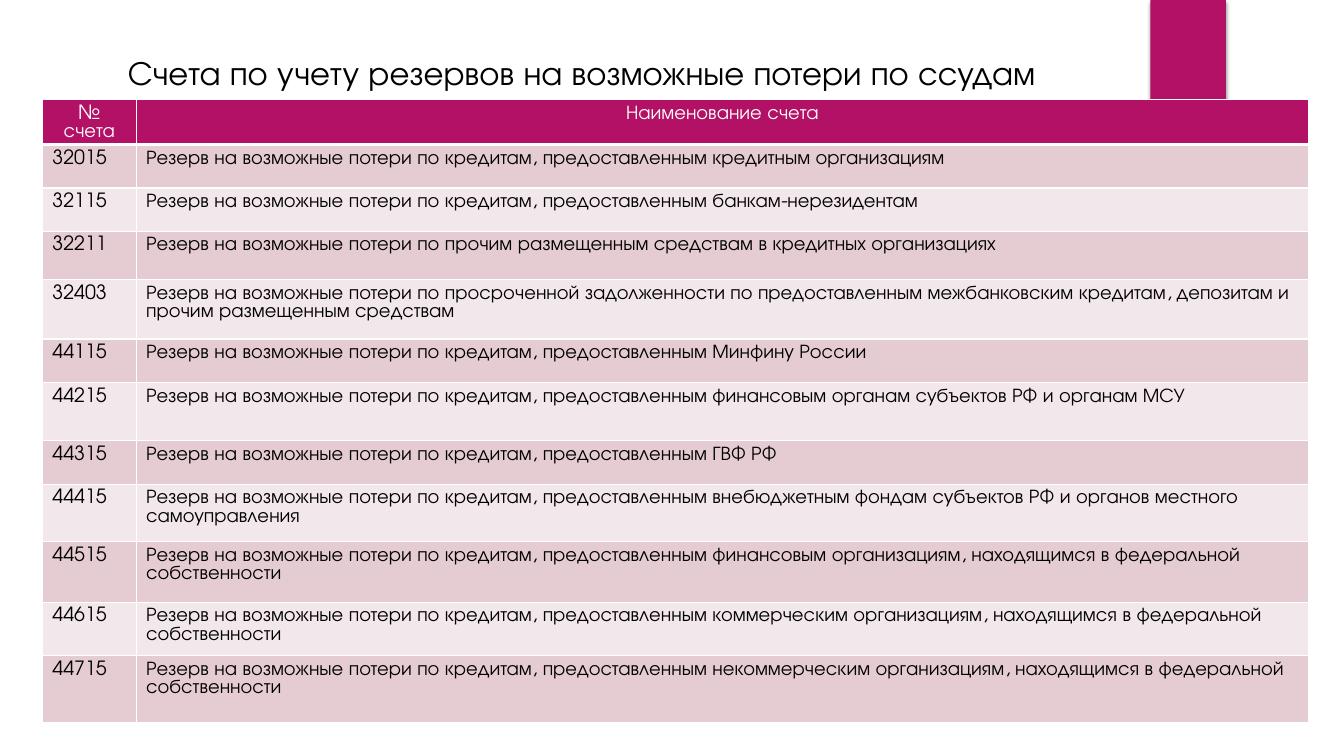
from lxml import etree
from pptx import Presentation
from pptx.dml.color import RGBColor
from pptx.enum.shapes import MSO_SHAPE
from pptx.enum.text import MSO_ANCHOR, PP_ALIGN
from pptx.oxml.ns import qn
from pptx.util import Inches, Pt

RECTANGLE = MSO_SHAPE.RECTANGLE
TOP = MSO_ANCHOR.TOP
LEFT, CENTER = PP_ALIGN.LEFT, PP_ALIGN.CENTER
FONT = "TeX Gyre Adventor"
COLORS = {"accent": "B31166", "dark_band": "E5CCD3", "light_band": "F2E7EA",
          "white": "FFFFFF", "black": "000000"}
COLUMN_WIDTHS = [0.93, 11.63]
ROW_HEIGHTS = [0.43, 0.43, 0.43, 0.48, 0.59, 0.43, 0.58, 0.43, 0.57, 0.6, 0.53, 0.67]
RESERVE = "Резерв на возможные потери по "
LOANS = RESERVE + "кредитам, предоставленным "
FEDERAL = " организациям, находящимся в федеральной собственности"
ACCOUNTS = [
    ("№ счета", "Наименование счета"),
    ("32015", LOANS + "кредитным организациям"),
    ("32115", LOANS + "банкам-нерезидентам"),
    ("32211", RESERVE + "прочим размещенным средствам в кредитных организациях"),
    ("32403", RESERVE + "просроченной задолженности по предоставленным межбанковским "
                        "кредитам, депозитам и прочим размещенным средствам"),
    ("44115", LOANS + "Минфину России"),
    ("44215", LOANS + "финансовым органам субъектов РФ и органам МСУ"),
    ("44315", LOANS + "ГВФ РФ"),
    ("44415", LOANS + "внебюджетным фондам субъектов РФ и органов местного самоуправления"),
    ("44515", LOANS + "финансовым" + FEDERAL),
    ("44615", LOANS + "коммерческим" + FEDERAL),
    ("44715", LOANS + "некоммерческим" + FEDERAL),
]


def write_text(text_frame, text, size, color="black", align=LEFT, line_spacing=None):
    """Write one formatted paragraph into a text frame."""
    paragraph = text_frame.paragraphs[0]
    paragraph.alignment = align
    paragraph.line_spacing = line_spacing
    run = paragraph.add_run()
    run.text = text
    run.font.name = FONT
    run.font.size = Pt(size)
    run.font.bold = False
    run.font.color.rgb = RGBColor.from_string(COLORS[color])


def add_ribbon(slide):
    """Add the accent ribbon with its soft shadow."""
    ribbon = slide.shapes.add_shape(RECTANGLE, Inches(11.41), 0, Inches(0.75), Inches(1.25))
    ribbon.fill.solid()
    ribbon.fill.fore_color.rgb = RGBColor.from_string(COLORS["accent"])
    ribbon.line.fill.background()
    ribbon.shadow.inherit = False
    effects = ribbon._element.spPr.find(qn("a:effectLst"))
    shadow = etree.SubElement(effects, qn("a:outerShdw"), blurRad=str(Pt(3)),
                              dist=str(Pt(2)), dir="5400000", rotWithShape="0")
    color = etree.SubElement(shadow, qn("a:srgbClr"), val=COLORS["black"])
    etree.SubElement(color, qn("a:alpha"), val="45000")


def set_borders(cell, bottom_width, top_width):
    """Draw white borders around a table cell."""
    properties = cell._tc.get_or_add_tcPr()
    widths = {"lnL": 1, "lnR": 1, "lnT": top_width, "lnB": bottom_width}
    for position, (side, width) in enumerate(widths.items()):
        line = etree.Element(qn("a:" + side), w=str(Pt(width)))
        fill = etree.SubElement(line, qn("a:solidFill"))
        etree.SubElement(fill, qn("a:srgbClr"), val=COLORS["white"])
        properties.insert(position, line)


def format_cell(cell, text, row_index):
    """Fill a cell with text and the colours of its row."""
    is_header = row_index == 0
    band = "accent" if is_header else ("light_band", "dark_band")[row_index % 2]
    cell.fill.solid()
    cell.fill.fore_color.rgb = RGBColor.from_string(COLORS[band])
    cell.margin_top = Inches(0.05)
    cell.margin_bottom = Inches(0.03)
    cell.vertical_anchor = TOP
    set_borders(cell, bottom_width=3 if is_header else 1,
                top_width=3 if row_index == 1 else 1)
    write_text(cell.text_frame, text, 14, color="white" if is_header else "black",
               align=CENTER if is_header else LEFT, line_spacing=Pt(13.1))


def add_accounts_table(slide):
    """Add the table of reserve accounts."""
    frame = slide.shapes.add_table(len(ACCOUNTS), len(COLUMN_WIDTHS), Inches(0.42),
                                   Inches(0.99), Inches(sum(COLUMN_WIDTHS)),
                                   Inches(sum(ROW_HEIGHTS)))
    table = frame.table
    for column, width in zip(table.columns, COLUMN_WIDTHS):
        column.width = Inches(width)
    for row_index, account in enumerate(ACCOUNTS):
        table.rows[row_index].height = Inches(ROW_HEIGHTS[row_index])
        for column_index, text in enumerate(account):
            format_cell(table.cell(row_index, column_index), text, row_index)


def place_title(slide):
    """Move and format the title placeholder."""
    title = slide.shapes.title
    title.left, title.top = Inches(0.5), Inches(0.46)
    title.width, title.height = Inches(10.54), Inches(0.5)
    title.text_frame.word_wrap = True
    title.text_frame.vertical_anchor = TOP
    write_text(title.text_frame, "Счета по учету резервов на возможные потери по ссудам",
               24, align=CENTER)


def main():
    """Build and save the slide."""
    presentation = Presentation()
    presentation.slide_width = Inches(13.33)
    presentation.slide_height = Inches(7.5)
    slide = presentation.slides.add_slide(presentation.slide_layouts[5])
    add_ribbon(slide)
    add_accounts_table(slide)
    place_title(slide)
    presentation.save("out.pptx")


if __name__ == "__main__":
    main()
